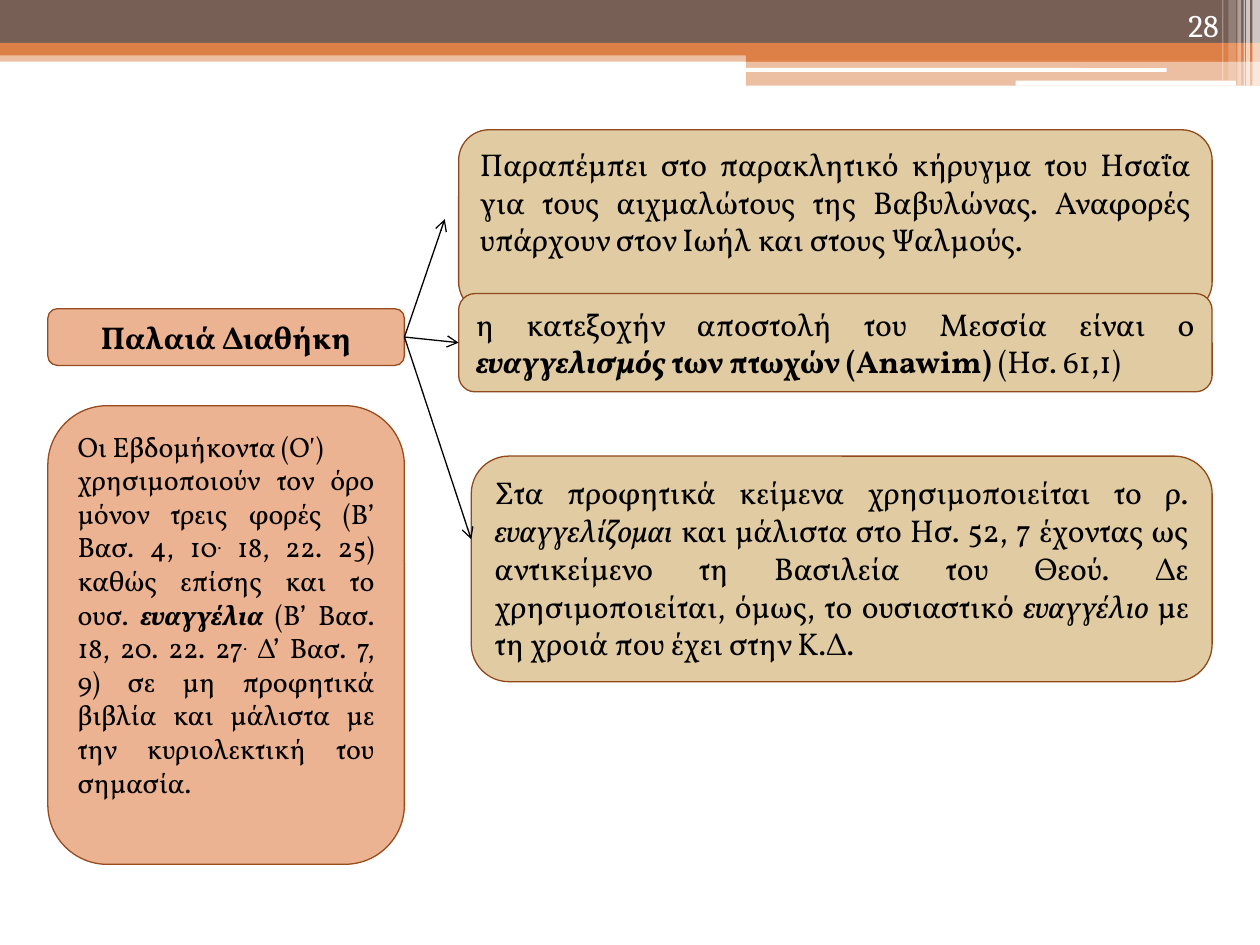
from lxml.etree import SubElement as Sub
from pptx import Presentation
from pptx.dml.color import RGBColor
from pptx.enum.shapes import MSO_CONNECTOR as Conn, MSO_SHAPE as Shape
from pptx.enum.text import MSO_ANCHOR as Anchor, MSO_AUTO_SIZE as Fit, PP_ALIGN as Align
from pptx.oxml.ns import qn
from pptx.util import Inches, Pt


def paint(fmt, code):
    fmt.solid()
    fmt.fore_color.rgb = RGBColor.from_string(code)


def write(par, runs, size, face, code, align):
    par.alignment = align
    for text, style in runs:
        run = par.add_run()
        run.text = text
        font = run.font
        font.size = Pt(size)
        font.name = face
        font.bold = "b" in style
        font.italic = "i" in style
        paint(font.fill, code)
        if "s" in style:
            run._r.get_or_add_rPr().set("baseline", "30000")


deck = Presentation()
deck.slide_width = Inches(10)
deck.slide_height = Inches(7.5)
slide = deck.slides.add_slide(deck.slide_layouts[6])
shapes = slide.shapes

WHITE, BLACK = "FFFFFF", "000000"
BROWN, ORANGE = "775F55", "DD8047"
SAND, PEACH = "E0CBA3", "EBB391"
RECT, ROUND = Shape.RECTANGLE, Shape.ROUNDED_RECTANGLE

bands = [
    (RECT, 0, 0.4, 10, 0.09, ORANGE, 50),
    (RECT, 0, 0, 10, 0.34, BROWN, 100),
    (RECT, 0, 0.34, 10, 0.1, ORANGE, 100),
    (RECT, 5.92, 0.39, 4.08, 0.1, ORANGE, 100),
    (RECT, 5.92, 0.48, 4.08, 0.2, ORANGE, 50),
    (ROUND, 5.91, 0.54, 3.35, 0.03, WHITE, 100),
    (ROUND, 8.06, 0.64, 1.75, 0.04, WHITE, 100),
    (RECT, 9.94, 0, 0.06, 0.68, WHITE, 65),
    (RECT, 9.89, 0, 0.03, 0.68, WHITE, 65),
    (RECT, 9.87, 0, 0.01, 0.68, WHITE, 60),
    (RECT, 9.82, 0, 0.03, 0.68, WHITE, 40),
    (RECT, 9.75, 0, 0.06, 0.64, WHITE, 20),
    (RECT, 9.7, 0, 0.01, 0.64, WHITE, 30),
]
for kind, x, y, w, h, code, alpha in bands:
    band = shapes.add_shape(kind, Inches(x), Inches(y), Inches(w), Inches(h))
    band.shadow.inherit = False
    paint(band.fill, code)
    band.line.fill.background()
    if alpha < 100:
        tint = band._element.spPr.find(qn("a:solidFill"))[0]
        Sub(tint, qn("a:alpha")).set("val", str(alpha * 1000))

page = shapes.add_textbox(Inches(8.94), Inches(0), Inches(0.83), Inches(0.4))
frame = page.text_frame
frame.word_wrap = True
frame.vertical_anchor = Anchor.BOTTOM
write(frame.paragraphs[0], [("28", "")], 18, "Cambria", WHITE, Align.RIGHT)

comfort = [[("Παραπέμπει στο παρακλητικό κήρυγμα του Ησαΐα για τους αιχμαλώτους της "
             "Βαβυλώνας. Αναφορές υπάρχουν στον Ιωήλ και στους Ψαλμούς.", "")]]
mission = [[("η κατεξοχήν αποστολή του Μεσσία είναι ο ", ""),
            ("ευαγγελισμός", "bi"),
            (" των πτωχών (Anawim) ", "b"),
            ("(Ησ. 61,1)", "")]]
prophets = [[("Στα προφητικά κείμενα χρησιμοποιείται το ρ. ", ""),
             ("ευαγγελίζομαι", "i"),
             (" και μάλιστα στο Ησ. 52, 7 έχοντας ως αντικείμενο τη Βασιλεία του Θεού. "
              "Δε χρησιμοποιείται, όμως, το ουσιαστικό ", ""),
             ("ευαγγέλιο ", "i"),
             ("με τη χροιά που έχει στην Κ.Δ.", "")]]
seventy = [[("Οι Εβδομήκοντα (Ο΄)", "")],
           [("χρησιμοποιούν τον όρο μόνον τρεις φορές (Β’ Βασ. 4, 10", ""),
            (".", "s"),
            (" 18, 22. 25) καθώς επίσης και το ουσ. ", ""),
            ("ευαγγέλια", "bi"),
            (" (Β’ Βασ. 18, 20. 22. 27", ""),
            (".", "s"),
            (" Δ’ Βασ. 7, 9) σε μη προφητικά βιβλία και μάλιστα με την "
             "κυριολεκτική του σημασία.", "")]]
title = [[("Παλαιά Διαθήκη", "b")]]

cards = [
    (3.64, 1.03, 5.98, 1.45, SAND, "91481B", 18, Align.JUSTIFY, comfort),
    (3.64, 2.33, 5.98, 0.78, SAND, "91481B", 18, Align.JUSTIFY, mission),
    (3.74, 3.62, 5.88, 1.79, SAND, "91481B", 18, Align.JUSTIFY, prophets),
    (0.38, 3.22, 2.83, 3.64, PEACH, "984B1C", 16, Align.JUSTIFY, seventy),
    (0.38, 2.45, 2.83, 0.45, PEACH, "984B1C", 18, Align.CENTER, title),
]
boxes = []
for x, y, w, h, code, edge, size, align, text in cards:
    box = shapes.add_shape(ROUND, Inches(x), Inches(y), Inches(w), Inches(h))
    box.shadow.inherit = False
    paint(box.fill, code)
    paint(box.line.fill, edge)
    box.line.width = Pt(0.75)
    frame = box.text_frame
    frame.word_wrap = True
    frame.auto_size = Fit.SHAPE_TO_FIT_TEXT
    frame.vertical_anchor = Anchor.TOP
    for i, runs in enumerate(text):
        par = frame.add_paragraph() if i else frame.paragraphs[0]
        write(par, runs, size, "Vollkorn", BLACK, align)
    boxes.append(box)

for x, y, goal in [(3.53, 1.74, None), (3.64, 2.72, boxes[1]), (3.74, 4.28, None)]:
    arrow = shapes.add_connector(Conn.STRAIGHT, Inches(3.21), Inches(2.67), Inches(x), Inches(y))
    arrow.begin_connect(boxes[4], 3)
    if goal:
        arrow.end_connect(goal, 1)
    paint(arrow.line.fill, BLACK)
    arrow.line.width = Pt(0.75)
    Sub(arrow.line._get_or_add_ln(), qn("a:tailEnd")).set("type", "arrow")
    Sub(arrow._element.spPr, qn("a:effectLst"))

deck.save("out.pptx")
